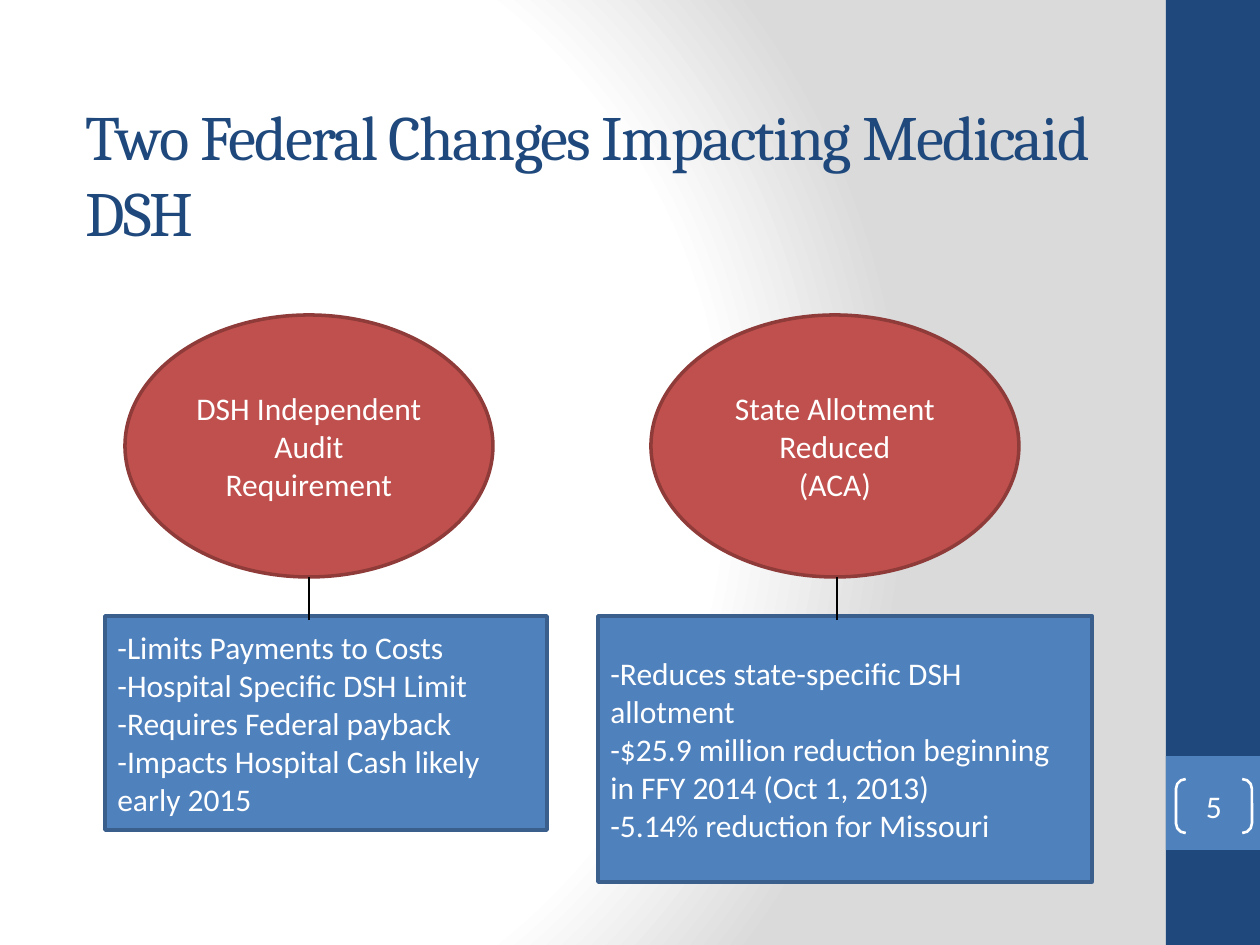
"""Build the slide on two federal changes impacting Medicaid DSH."""
from pptx import Presentation
from pptx.dml.color import RGBColor
from pptx.enum.shapes import MSO_CONNECTOR, MSO_SHAPE
from pptx.enum.text import MSO_ANCHOR, PP_ALIGN
from pptx.oxml import parse_xml
from pptx.oxml.ns import nsdecls, qn
from pptx.util import Emu, Pt

RECTANGLE, OVAL = MSO_SHAPE.RECTANGLE, MSO_SHAPE.OVAL
PROCESS, BRACKETS = MSO_SHAPE.FLOWCHART_PROCESS, MSO_SHAPE.DOUBLE_BRACKET
STRAIGHT = MSO_CONNECTOR.STRAIGHT
MIDDLE, LEFT, CENTER = MSO_ANCHOR.MIDDLE, PP_ALIGN.LEFT, PP_ALIGN.CENTER

TITLE = "Two Federal Changes Impacting Medicaid DSH"
PAGE_NUMBER = "5"
CHANGES = [
    {
        "topic": ["DSH Independent Audit Requirement"],
        "effects": [
            "-Limits Payments to Costs",
            "-Hospital Specific DSH Limit",
            "-Requires Federal payback",
            "-Impacts Hospital Cash likely early 2015",
        ],
        "oval_left": 125, "line_x": 309, "box": (105, 616, 442, 214),
    },
    {
        "topic": ["State Allotment Reduced", "(ACA)"],
        "effects": [
            "-Reduces state-specific DSH allotment",
            "-$25.9 million reduction beginning in FFY 2014 (Oct 1, 2013)",
            "-5.14% reduction for Missouri",
        ],
        "oval_left": 651, "line_x": 837, "box": (598, 616, 494, 266),
    },
]
COLORS = {
    "navy": "1F497D", "blue": "4F81BD", "blue_edge": "3A5F8C",
    "red": "C0504D", "red_edge": "8E3B39",
    "white": "FFFFFF", "gray": "DADADA", "black": "000000",
}
BACKDROP_STOPS = [(0, "white"), (75, "white"), (100, "gray")]
WIDTH, HEIGHT = 1260, 945
SIDEBAR_LEFT, SIDEBAR_WIDTH = 1166, 94
OVAL_TOP, OVAL_WIDTH, OVAL_HEIGHT = 315, 368, 262
LINE_BOTTOM = 620


def px(value):
    return Emu(round(value * 914400 / 126))


def color(name):
    return RGBColor.from_string(COLORS[name])


def write(shape, lines, align=LEFT, size=18, font="Calibri", ink="white"):
    frame = shape.text_frame
    frame.word_wrap = True
    frame.vertical_anchor = MIDDLE
    frame.text = "\n".join(lines)
    for paragraph in frame.paragraphs:
        paragraph.alignment = align
        paragraph.font.size = Pt(size)
        paragraph.font.name = font
        paragraph.font.color.rgb = color(ink)


def add_box(slide, kind, box, fill=None, edge=None, weight=2):
    shape = slide.shapes.add_shape(kind, *map(px, box))
    shape.shadow.inherit = False
    if fill:
        shape.fill.solid()
        shape.fill.fore_color.rgb = color(fill)
    else:
        shape.fill.background()
    if edge:
        shape.line.color.rgb = color(edge)
        shape.line.width = Pt(weight)
    else:
        shape.line.fill.background()
    return shape


def add_line(slide, x, top, bottom):
    line = slide.shapes.add_connector(STRAIGHT, px(x), px(top), px(x), px(bottom))
    line.line.color.rgb = color("black")
    line.line.width = Pt(1)
    line._element.spPr.append(parse_xml(f"<a:effectLst {nsdecls('a')}/>"))


def paint_background(slide):
    fill = slide.background.fill
    fill.solid()
    stops = "".join(
        f'<a:gs pos="{position * 1000}"><a:srgbClr val="{COLORS[name]}"/></a:gs>'
        for position, name in BACKDROP_STOPS
    )
    gradient = parse_xml(
        f'<a:gradFill {nsdecls("a")} rotWithShape="1"><a:gsLst>{stops}</a:gsLst>'
        '<a:path path="circle"><a:fillToRect l="20000" t="50000" r="100000" b="50000"/>'
        "</a:path></a:gradFill>"
    )
    solid = slide._element.find(".//" + qn("p:bgPr")).find(qn("a:solidFill"))
    solid.getparent().replace(solid, gradient)


def add_title(slide):
    title = slide.shapes.add_textbox(*map(px, (73, 94, 1050, 158)))
    write(title, [TITLE], size=36, font="Cambria", ink="navy")
    title.text_frame.paragraphs[0].runs[0].font._element.set("spc", "-100")


def add_page_number(slide):
    brackets = add_box(slide, BRACKETS, (1176, 779, 76, 54), edge="white", weight=1.5)
    brackets.adjustments[0] = 0.18
    write(brackets, [PAGE_NUMBER], CENTER)
    frame = brackets.text_frame
    frame.margin_left = frame.margin_right = frame.margin_top = frame.margin_bottom = 0


def add_change(slide, change):
    oval_box = (change["oval_left"], OVAL_TOP, OVAL_WIDTH, OVAL_HEIGHT)
    oval = add_box(slide, OVAL, oval_box, "red", "red_edge")
    write(oval, change["topic"], CENTER)
    effects = add_box(slide, PROCESS, change["box"], "blue", "blue_edge")
    write(effects, change["effects"])
    add_line(slide, change["line_x"], OVAL_TOP + OVAL_HEIGHT, LINE_BOTTOM)


def main():
    presentation = Presentation()
    presentation.slide_width, presentation.slide_height = px(WIDTH), px(HEIGHT)
    slide = presentation.slides.add_slide(presentation.slide_layouts[6])
    paint_background(slide)
    add_box(slide, RECTANGLE, (SIDEBAR_LEFT, 0, SIDEBAR_WIDTH, HEIGHT), "navy")
    add_box(slide, RECTANGLE, (SIDEBAR_LEFT, 756, SIDEBAR_WIDTH, 94), "blue")
    add_title(slide)
    add_page_number(slide)
    for change in CHANGES:
        add_change(slide, change)
    presentation.save("out.pptx")


if __name__ == "__main__":
    main()
